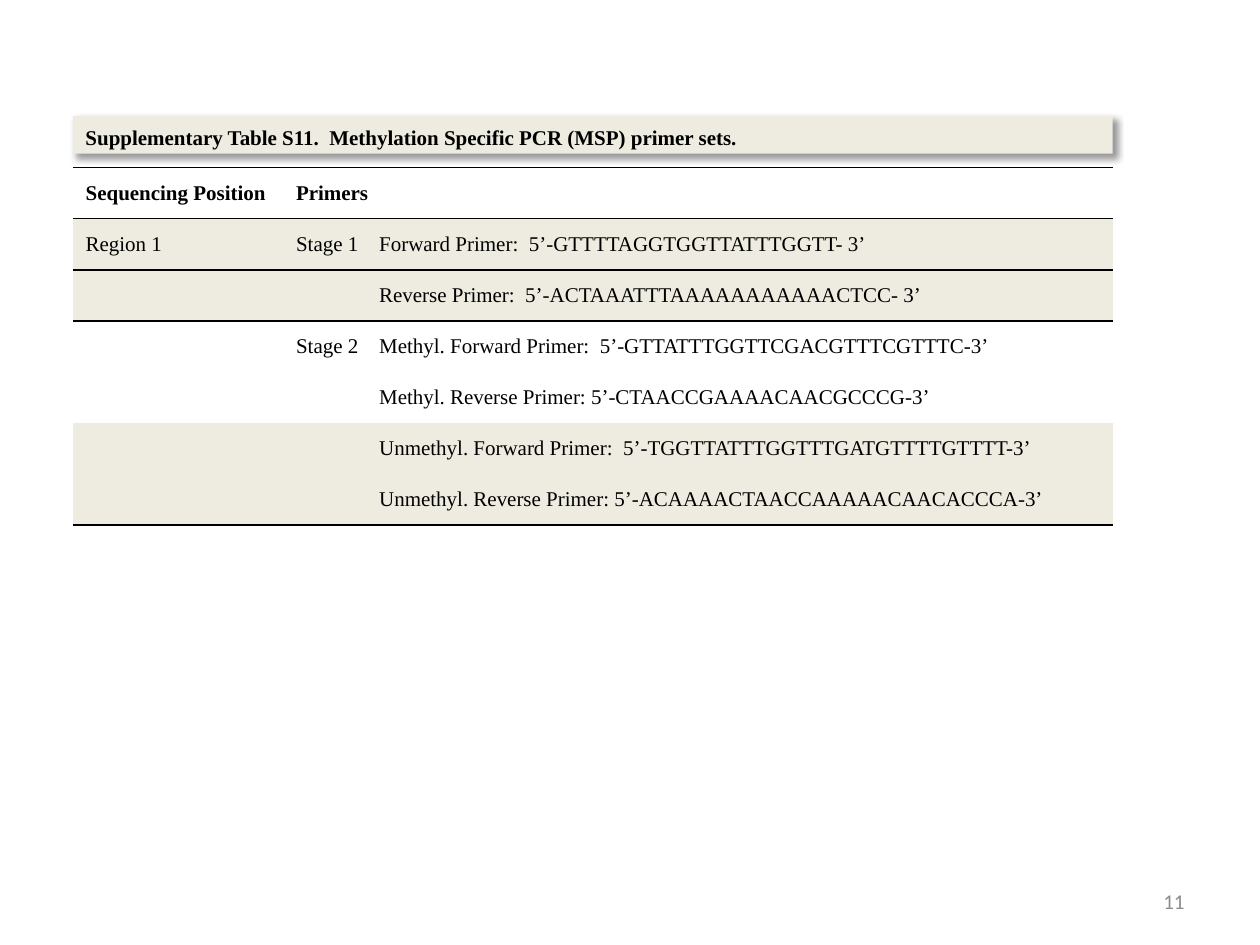
from dataclasses import dataclass

from lxml.etree import SubElement
from pptx import Presentation
from pptx.dml.color import RGBColor
from pptx.enum.shapes import MSO_SHAPE
from pptx.enum.text import MSO_ANCHOR, PP_ALIGN
from pptx.oxml import parse_xml
from pptx.oxml.ns import nsdecls, qn
from pptx.util import Inches, Pt


@dataclass(frozen=True)
class Theme:
    ink: str = "000000"
    band: str = "EEECE1"
    muted: str = "8C8C8C"
    serif: str = "Times New Roman"
    sans: str = "Calibri"
    size: int = 12
    rule: int = 1


THEME = Theme()
LEFT, WIDTH = 0.58, 8.25
TABLE_TOP, TABLE_HEIGHT = 1.33, 2.84
COLUMN_WIDTHS = (1.67, 6.58)
PRIMER_TAB = 0.66
NO_STYLE = "{2D5ABB26-0587-4C30-8999-92F81FD0307C}"

ROWS = [
    ("Sequencing Position", "Primers"),
    ("Region 1", "Stage 1\tForward Primer:  5’-GTTTTAGGTGGTTATTTGGTT- 3’"),
    ("", "\tReverse Primer:  5’-ACTAAATTTAAAAAAAAAAACTCC- 3’"),
    ("", "Stage 2\tMethyl. Forward Primer:  5’-GTTATTTGGTTCGACGTTTCGTTTC-3’"),
    ("", "\tMethyl. Reverse Primer: 5’-CTAACCGAAAACAACGCCCG-3’"),
    ("", "\tUnmethyl. Forward Primer:  5’-TGGTTATTTGGTTTGATGTTTTGTTTT-3’"),
    ("", "\tUnmethyl. Reverse Primer: 5’-ACAAAACTAACCAAAAACAACACCCA-3’"),
]
BANDED_ROWS = {1, 2, 5, 6}
RULED_EDGES = {0, 1, 2, len(ROWS)}  # edge n lies above row n


def style_text(p, font=THEME.serif, color=THEME.ink, bold=False):
    p.font.name = font
    p.font.size = Pt(THEME.size)
    p.font.bold = bold
    p.font.color.rgb = RGBColor.from_string(color)


def add_shadow(s):
    s.shadow.inherit = False
    effects = s._element.spPr.find(qn("a:effectLst"))
    shadow = SubElement(effects, qn("a:outerShdw"), blurRad=str(Pt(4)),
                        dist=str(Pt(3)), dir=str(45 * 60000), rotWithShape="0")
    color = SubElement(shadow, qn("a:srgbClr"), val=THEME.ink)
    SubElement(color, qn("a:alpha"), val="40000")


def add_title_bar(slide, text):
    s = slide.shapes.add_shape(MSO_SHAPE.RECTANGLE, Inches(LEFT), Inches(0.92),
                               Inches(WIDTH), Inches(0.3))
    s.fill.solid()
    s.fill.fore_color.rgb = RGBColor.from_string(THEME.band)
    s.line.fill.background()
    add_shadow(s)
    tf = s.text_frame
    tf.word_wrap = True
    tf.vertical_anchor = MSO_ANCHOR.MIDDLE
    p = tf.paragraphs[0]
    p.text = text
    p.alignment = PP_ALIGN.LEFT
    p.line_spacing = 1.15
    p.space_after = Pt(10)
    style_text(p, bold=True)


def add_tab_stop(p, position):
    tabs = SubElement(p._p.get_or_add_pPr(), qn("a:tabLst"))
    SubElement(tabs, qn("a:tab"), pos=str(Inches(position)), algn="l")


def set_border(cell, tag):
    cell._tc.get_or_add_tcPr().insert(0, parse_xml(
        f'<a:{tag} {nsdecls("a")} w="{Pt(THEME.rule)}"><a:solidFill>'
        f'<a:srgbClr val="{THEME.ink}"/></a:solidFill></a:{tag}>'))


def fill_cell(cell, text, row):
    cell.vertical_anchor = MSO_ANCHOR.MIDDLE
    p = cell.text_frame.paragraphs[0]
    p.text = text
    if "\t" in text:
        add_tab_stop(p, PRIMER_TAB)
    style_text(p, bold=row == 0)
    if row in BANDED_ROWS:
        cell.fill.solid()
        cell.fill.fore_color.rgb = RGBColor.from_string(THEME.band)
    else:
        cell.fill.background()
    # Bottom goes in first so that the top border ends up ahead of it.
    for edge, tag in ((row + 1, "lnB"), (row, "lnT")):
        if edge in RULED_EDGES:
            set_border(cell, tag)


def add_primer_table(slide):
    frame = slide.shapes.add_table(len(ROWS), len(COLUMN_WIDTHS), Inches(LEFT),
                                   Inches(TABLE_TOP), Inches(WIDTH),
                                   Inches(TABLE_HEIGHT))
    table = frame.table
    table._tbl.tblPr.find(qn("a:tableStyleId")).text = NO_STYLE
    table.horz_banding = False
    for column, width in zip(table.columns, COLUMN_WIDTHS):
        column.width = Inches(width)
    for row, texts in enumerate(ROWS):
        for col, text in enumerate(texts):
            fill_cell(table.cell(row, col), text, row)


def add_page_number(slide, number):
    s = slide.shapes.add_textbox(Inches(7.17), Inches(6.95), Inches(2.33), Inches(0.4))
    tf = s.text_frame
    tf.word_wrap = True
    tf.vertical_anchor = MSO_ANCHOR.MIDDLE
    p = tf.paragraphs[0]
    p.text = number
    p.alignment = PP_ALIGN.RIGHT
    style_text(p, THEME.sans, THEME.muted)


def main():
    prs = Presentation()
    prs.slide_width, prs.slide_height = Inches(10), Inches(7.5)
    slide = prs.slides.add_slide(prs.slide_layouts[6])
    add_page_number(slide, "11")
    add_title_bar(slide, "Supplementary Table S11.  Methylation Specific PCR (MSP) primer sets.")
    add_primer_table(slide)
    prs.save("out.pptx")


if __name__ == "__main__":
    main()
